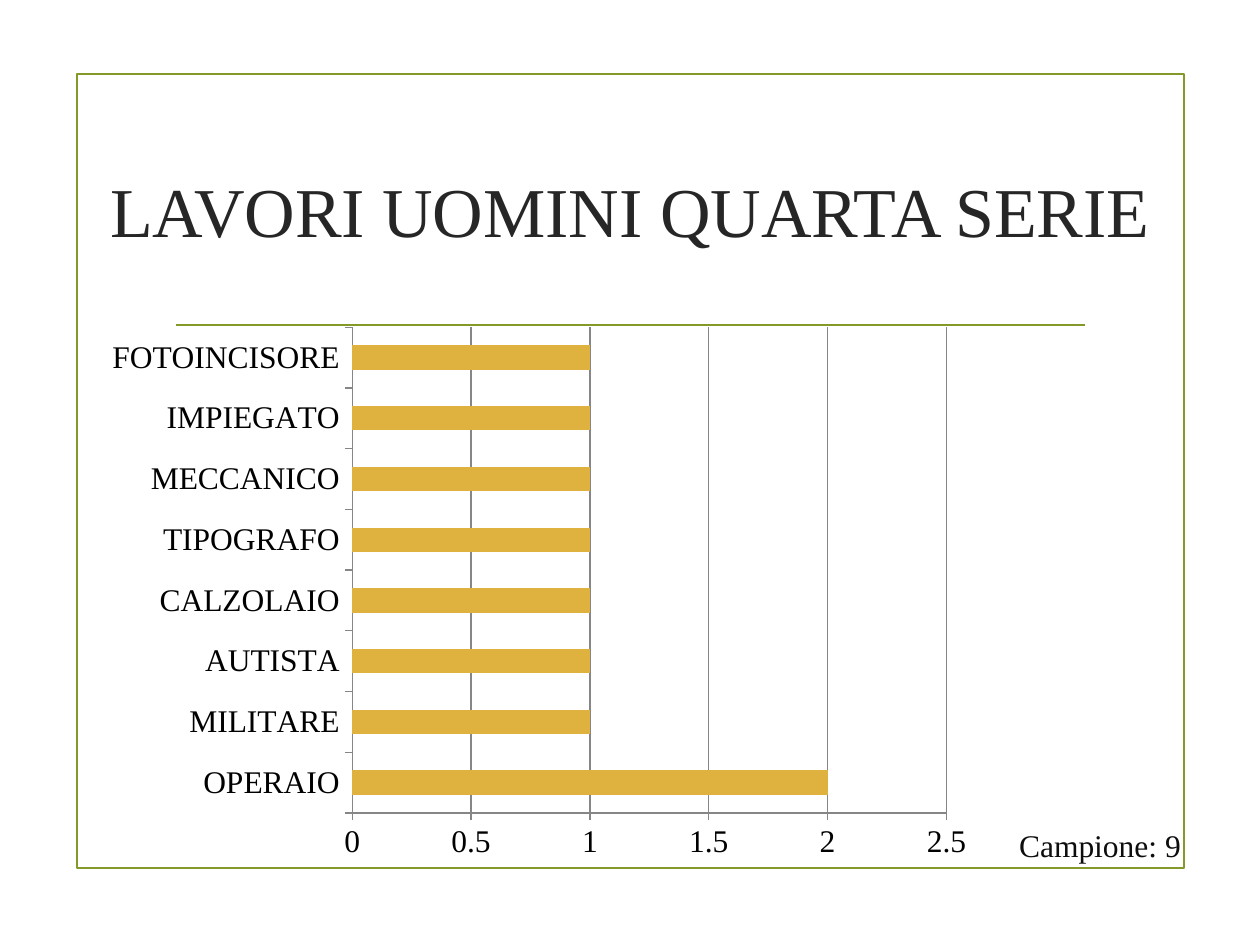
import pptx
import pptx.chart.data
import pptx.dml.color
import pptx.enum.chart
import pptx.enum.shapes
import pptx.enum.text
import pptx.util
from pptx.oxml.ns import qn

WIDTH, HEIGHT = 10, 7.5
GREEN, GOLD, GREY = "83992A", "DFB240", "868686"
JOBS = {
    "OPERAIO": 2,
    "MILITARE": 1,
    "AUTISTA": 1,
    "CALZOLAIO": 1,
    "TIPOGRAFO": 1,
    "MECCANICO": 1,
    "IMPIEGATO": 1,
    "FOTOINCISORE": 1,
}


def color(value):
    return pptx.dml.color.RGBColor.from_string(value)


def assign(target, values):
    for name, value in values.items():
        setattr(target, name, value)


class SlideBuilder:
    font_name = "Times New Roman"

    def __init__(self, deck):
        self.page = deck.slides.add_slide(deck.slide_layouts[6])
        self.size = (deck.slide_width, deck.slide_height)

    def place(self, *shares):
        return [round(share * self.size[i % 2]) for i, share in enumerate(shares)]

    def style_font(self, font, size, ink):
        assign(font, {"name": self.font_name, "size": pptx.util.Pt(size), "bold": False})
        font.color.rgb = color(ink)

    def style_line(self, line, ink, weight):
        line.color.rgb = color(ink)
        line.width = pptx.util.Pt(weight)

    def frame(self, *shares):
        box = self.page.shapes.add_shape(
            pptx.enum.shapes.MSO_SHAPE.RECTANGLE, *self.place(*shares))
        box.shadow.inherit = False
        box.fill.background()
        self.style_line(box.line, GREEN, 1.25)

    def rule(self, *shares):
        line = self.page.shapes.add_connector(
            pptx.enum.shapes.MSO_CONNECTOR.STRAIGHT, *self.place(*shares))
        self.style_line(line.line, GREEN, 1.25)
        properties = line._element.spPr
        properties.append(properties.makeelement(qn("a:effectLst"), {}))

    def text(self, words, shares, size, ink, align="LEFT", anchor="TOP"):
        box = self.page.shapes.add_textbox(*self.place(*shares))
        assign(box.text_frame, {
            "word_wrap": True,
            "vertical_anchor": getattr(pptx.enum.text.MSO_ANCHOR, anchor),
        })
        para = box.text_frame.paragraphs[0]
        para.alignment = getattr(pptx.enum.text.PP_ALIGN, align)
        span = para.add_run()
        span.text = words
        self.style_font(span.font, size, ink)

    def bars(self, values, shares):
        data = pptx.chart.data.CategoryChartData()
        data.categories = list(values)
        data.add_series("Series 1", list(values.values()))
        chart = self.page.shapes.add_chart(
            pptx.enum.chart.XL_CHART_TYPE.BAR_CLUSTERED, *self.place(*shares), data).chart
        assign(chart, {"has_legend": False, "has_title": False})
        self.style_font(chart.font, 18, "000000")
        plot = chart.plots[0]
        assign(plot, {"gap_width": 150, "vary_by_categories": False})
        fill = plot.series[0].format.fill
        fill.solid()
        fill.fore_color.rgb = color(GOLD)
        for axis in (chart.category_axis, chart.value_axis):
            axis.major_tick_mark = pptx.enum.chart.XL_TICK_MARK.OUTSIDE
            self.style_line(axis.format.line, GREY, 0.75)
        assign(chart.value_axis, {
            "minimum_scale": 0,
            "maximum_scale": 2.5,
            "major_unit": 0.5,
            "has_major_gridlines": True,
        })
        chart.category_axis.has_major_gridlines = False
        self.style_line(chart.value_axis.major_gridlines.format.line, GREY, 0.75)
        labels = chart.value_axis.tick_labels
        assign(labels, {"number_format": "General", "number_format_is_linked": False})


def main():
    deck = pptx.Presentation()
    assign(deck, {
        "slide_width": pptx.util.Inches(WIDTH),
        "slide_height": pptx.util.Inches(HEIGHT),
    })
    slide = SlideBuilder(deck)
    slide.frame(0.061, 0.59 / HEIGHT, 0.879, 0.84)
    slide.rule(0.14, 0.344, 0.861, 0.344)
    slide.text("LAVORI UOMINI QUARTA SERIE", (0.05, 1 / HEIGHT, 0.9, 1.33 / HEIGHT),
               40, "262626", "CENTER", "MIDDLE")
    slide.bars(JOBS, (0.075, 2.51 / HEIGHT, 0.706, 4.4 / HEIGHT))
    slide.text("Campione: 9", (0.799, 0.868, 0.24, 0.4 / HEIGHT), 18, "0D0D0D")
    deck.save("out.pptx")


if __name__ == "__main__":
    main()
